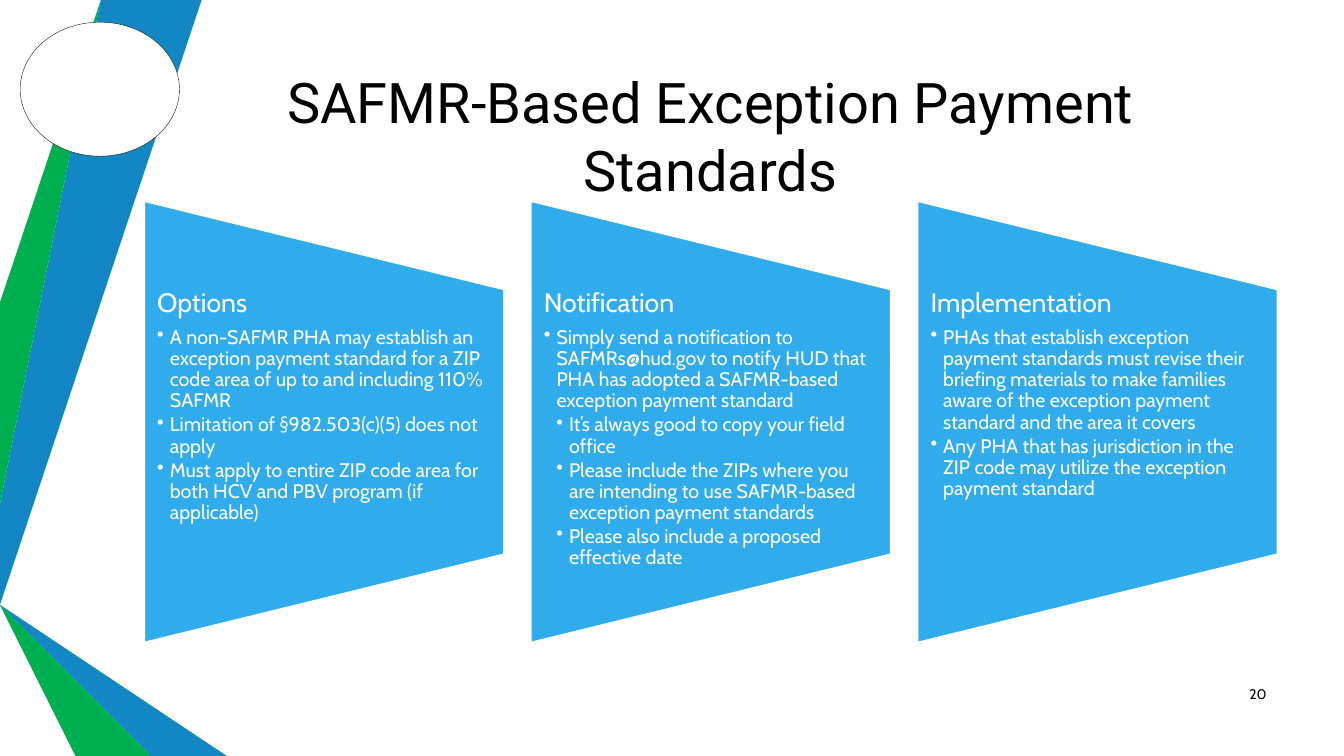
from typing import NamedTuple

from lxml.etree import SubElement
from pptx import Presentation
from pptx.dml.color import RGBColor
from pptx.enum.shapes import MSO_SHAPE
from pptx.enum.text import MSO_ANCHOR, PP_ALIGN
from pptx.oxml.ns import qn
from pptx.shapes.autoshape import Shape
from pptx.slide import Slide
from pptx.util import Inches, Pt

BLACK = RGBColor(0x00, 0x00, 0x00)
WHITE = RGBColor(0xFF, 0xFF, 0xFF)
BLUE = RGBColor(0x12, 0x87, 0xC3)
DARK_BLUE = RGBColor(0x0C, 0x5A, 0x82)
GREEN = RGBColor(0x00, 0xB0, 0x50)
CHARCOAL = RGBColor(0x26, 0x26, 0x26)
SKY = RGBColor(0x30, 0xAC, 0xEC)

PANEL_LEFT, PANEL_PITCH, PANEL_WIDTH = 1.43, 3.835, 3.57
PANEL_HEIGHT, PANEL_MIDDLE = 4.38, 4.185
INDENT = 0.125


class Ribbon(NamedTuple):
    color: RGBColor
    points: list[tuple[float, float]]


class Bullet(NamedTuple):
    text: str
    level: int = 1


class Panel(NamedTuple):
    heading: str
    bullets: list[Bullet]


RIBBONS = [
    Ribbon(BLUE, [(0, 5.44), (0, 5.76), (0.29, 5.79), (1.56, 0.01), (1.19, 0.01)]),
    Ribbon(GREEN, [(1.11, 0), (0.74, 0), (0, 3.36), (0, 5.06)]),
    Ribbon(CHARCOAL, [(0, 6.19), (0, 6.21), (1.25, 7.5), (1.32, 7.5)]),
    Ribbon(DARK_BLUE, [(0, 5.79), (0, 5.8), (2.09, 7.5), (2.17, 7.5)]),
    Ribbon(BLUE, [(0, 5.79), (2.17, 7.5), (3.11, 7.5), (0.29, 5.79), (0, 5.75)]),
    Ribbon(GREEN, [(0, 6.19), (1.32, 7.5), (2.01, 7.5), (0, 5.86)]),
]

PANELS = [
    Panel("Options", [
        Bullet("A non-SAFMR PHA may establish an exception payment standard "
               "for a ZIP code area of up to and including 110% SAFMR"),
        Bullet("Limitation of §982.503(c)(5) does not apply"),
        Bullet("Must apply to entire ZIP code area for both HCV and PBV "
               "program (if applicable)"),
    ]),
    Panel("Notification", [
        Bullet("Simply send a notification to SAFMRs@hud.gov to notify HUD "
               "that PHA has adopted a SAFMR-based exception payment standard"),
        Bullet("It’s always good to copy your field office", 2),
        Bullet("Please include the ZIPs where you are intending to use "
               "SAFMR-based exception payment standards", 2),
        Bullet("Please also include a proposed effective date", 2),
    ]),
    Panel("Implementation", [
        Bullet("PHAs that establish exception payment standards must revise "
               "their briefing materials to make families aware of the "
               "exception payment standard and the area it covers"),
        Bullet("Any PHA that has jurisdiction in the ZIP code may utilize the "
               "exception payment standard"),
    ]),
]


def paint(shape: Shape, fill: RGBColor, line: RGBColor | None = None,
          line_width: float = 0) -> None:
    shape.shadow.inherit = False
    shape.fill.solid()
    shape.fill.fore_color.rgb = fill
    if line is None:
        shape.line.fill.background()
    else:
        shape.line.color.rgb = line
        shape.line.width = Pt(line_width)


def format_runs(paragraph, size: float, color: RGBColor, name: str = "Cabin") -> None:
    for run in paragraph.runs:
        run.font.size = Pt(size)
        run.font.name = name
        run.font.color.rgb = color


def add_text_box(slide: Slide, left: float, top: float, width: float,
                 height: float) -> Shape:
    box = slide.shapes.add_textbox(
        Inches(left), Inches(top), Inches(width), Inches(height))
    box.text_frame.word_wrap = True
    return box


def add_label(slide: Slide, text: str, left: float, top: float, width: float,
              height: float, size: float, name: str, alignment: PP_ALIGN) -> None:
    """Add one black paragraph, centred vertically in its box."""
    frame = add_text_box(slide, left, top, width, height).text_frame
    frame.vertical_anchor = MSO_ANCHOR.MIDDLE
    frame.text = text
    frame.paragraphs[0].alignment = alignment
    format_runs(frame.paragraphs[0], size, BLACK, name)


def add_ribbon(slide: Slide, ribbon: Ribbon) -> None:
    builder = slide.shapes.build_freeform(*ribbon.points[0], scale=Inches(1))
    builder.add_line_segments(ribbon.points[1:], close=True)
    paint(builder.convert_to_shape(), ribbon.color)


def add_bullet(frame, bullet: Bullet) -> None:
    paragraph = frame.add_paragraph()
    paragraph.text = bullet.text
    paragraph.level = bullet.level
    paragraph.line_spacing = 0.9
    paragraph.space_after = Pt(2.1)
    properties = paragraph._p.get_or_add_pPr()
    properties.set("marL", str(Inches(INDENT * bullet.level)))
    properties.set("indent", str(-Inches(INDENT)))
    SubElement(properties, qn("a:buChar")).set("char", "•")
    format_runs(paragraph, 14, WHITE)


def add_panel(slide: Slide, panel: Panel, left: float) -> None:
    trapezoid = slide.shapes.add_shape(
        MSO_SHAPE.FLOWCHART_MANUAL_OPERATION,
        Inches(left + (PANEL_WIDTH - PANEL_HEIGHT) / 2),
        Inches(PANEL_MIDDLE - PANEL_WIDTH / 2),
        Inches(PANEL_HEIGHT), Inches(PANEL_WIDTH))
    trapezoid.rotation = 270
    paint(trapezoid, SKY, WHITE, 1.25)

    frame = add_text_box(slide, left, 2.87, PANEL_WIDTH, 2.63).text_frame
    frame.margin_left = frame.margin_right = Inches(0.13)
    frame.margin_top = frame.margin_bottom = 0
    frame.text = panel.heading
    heading = frame.paragraphs[0]
    heading.line_spacing = 0.9
    heading.space_after = Pt(6.65)
    format_runs(heading, 19, WHITE)
    for bullet in panel.bullets:
        add_bullet(frame, bullet)


def main() -> None:
    presentation = Presentation()
    presentation.slide_width = Inches(13.33)
    presentation.slide_height = Inches(7.5)
    slide = presentation.slides.add_slide(presentation.slide_layouts[6])

    for ribbon in RIBBONS:
        add_ribbon(slide, ribbon)
    badge = slide.shapes.add_shape(
        MSO_SHAPE.OVAL, Inches(0.2), Inches(0.22), Inches(1.58), Inches(1.33))
    paint(badge, WHITE, BLACK, 0.25)

    add_label(slide, "SAFMR-Based Exception Payment Standards",
              1.43, 0.5, 11.23, 1.68, 40, "Roboto", PP_ALIGN.CENTER)
    for index, panel in enumerate(PANELS):
        add_panel(slide, panel, PANEL_LEFT + index * PANEL_PITCH)
    add_label(slide, "20", 12.04, 6.68, 0.62, 0.4, 10, "Cabin", PP_ALIGN.RIGHT)

    presentation.save("out.pptx")


if __name__ == "__main__":
    main()
